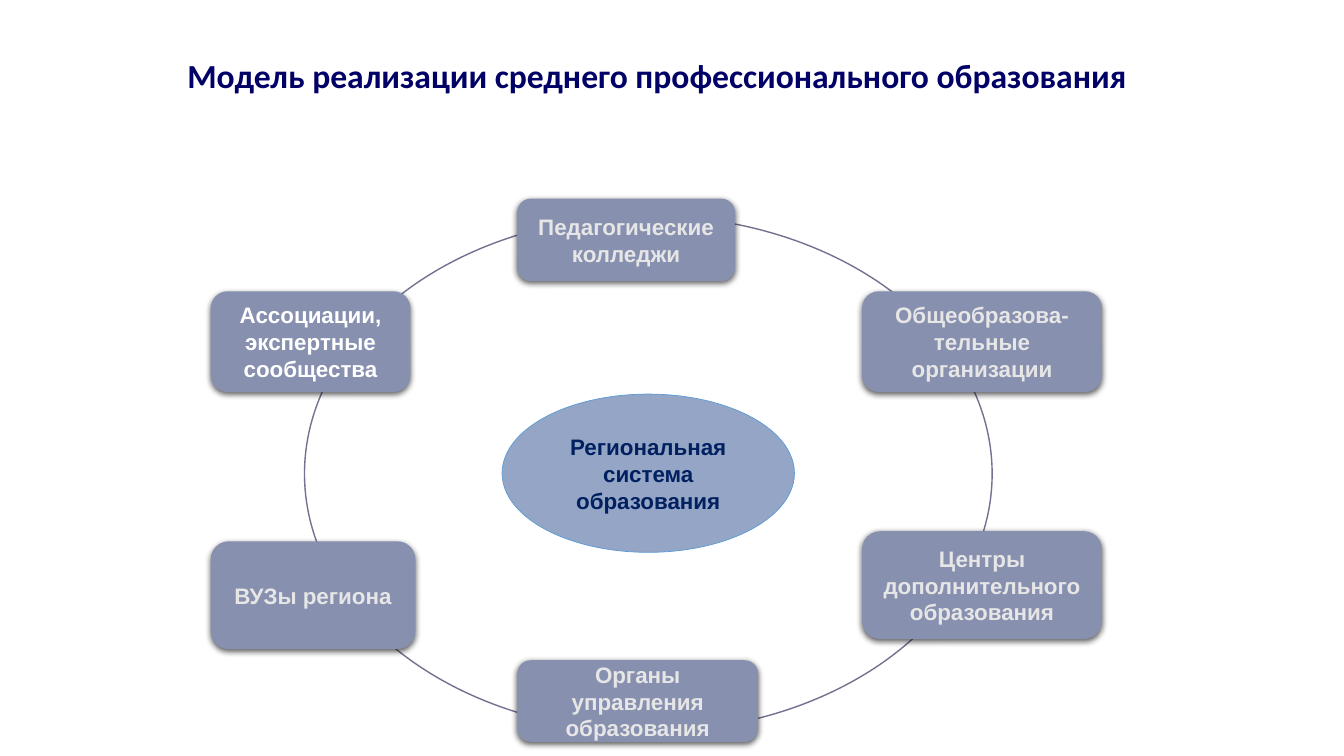
from lxml import etree
from pptx import Presentation
from pptx.dml.color import RGBColor
from pptx.enum.shapes import MSO_SHAPE
from pptx.enum.text import MSO_ANCHOR, PP_ALIGN
from pptx.oxml.ns import qn
from pptx.util import Pt

OVAL, CARD = MSO_SHAPE.OVAL, MSO_SHAPE.ROUNDED_RECTANGLE
TOP, MIDDLE = MSO_ANCHOR.TOP, MSO_ANCHOR.MIDDLE
CENTER = PP_ALIGN.CENTER
PX = 9144  # 100 px to the inch

COLORS = {
    "title": "000066", "white": "FFFFFF", "ring": "737190",
    "core": "95A5C6", "edge": "5B9BD5", "navy": "002060",
    "card": "8790AF", "pale": "E7E6E6", "shade": "000000",
}

TITLE = "Модель реализации среднего профессионального образования "
CORE = "Региональная система образования"
TITLE_BOX = (70, 50, 1171, 101)
RING_BOX = (302, 214, 682, 512)
CORE_BOX = (498, 391, 290, 157)

LEFT, MID, RIGHT = 209, 513, 855
UPPER = 289
CARDS = [
    ("Ассоциации, экспертные сообщества", (LEFT, UPPER, 198, 100), "white"),
    ("ВУЗы региона", (LEFT, 537, 203, 107), "pale"),
    ("Органы управления образования", (MID, 655, 239, 81), "pale"),
    ("Центры дополнительного образования", (RIGHT, 527, 238, 107), "pale"),
    ("Общеобразова-тельные организации", (RIGHT, UPPER, 238, 100), "pale"),
    ("Педагогические колледжи", (MID, 197, 216, 82), "pale"),
]


def rgb(name):
    return RGBColor.from_string(COLORS[name])


def emu(box):
    return [n * PX for n in box]


def write(shape, text, color, size=16, font="Arial", anchor=MIDDLE):
    frame = shape.text_frame
    frame.word_wrap = True
    frame.vertical_anchor = anchor
    para = frame.paragraphs[0]
    para.alignment = CENTER
    run = para.add_run()
    run.text = text
    run.font.size = Pt(size)
    run.font.name = font
    run.font.bold = True
    run.font.color.rgb = rgb(color)


def draw(slide, kind, box, fill, line=None, width=1):
    shape = slide.shapes.add_shape(kind, *emu(box))
    shape.shadow.inherit = False
    shape.fill.solid()
    shape.fill.fore_color.rgb = rgb(fill)
    if line:
        shape.line.color.rgb = rgb(line)
        shape.line.width = Pt(width)
    else:
        shape.line.fill.background()
    return shape


def shade(shape):
    """Add a soft shadow straight below the shape."""
    effects = shape.element.spPr.find(qn("a:effectLst"))
    outer = etree.SubElement(
        effects, qn("a:outerShdw"), blurRad=str(Pt(4.5)), dist=str(Pt(1.5)),
        dir="5400000", algn="ctr", rotWithShape="0")
    color = etree.SubElement(outer, qn("a:srgbClr"), val=COLORS["shade"])
    etree.SubElement(color, qn("a:alpha"), val="63000")


def main():
    deck = Presentation()
    deck.slide_width, deck.slide_height = emu((1333, 750))
    slide = deck.slides.add_slide(deck.slide_layouts[6])

    title = slide.shapes.add_textbox(*emu(TITLE_BOX))
    write(title, TITLE, "title", size=24, font="Calibri", anchor=TOP)

    draw(slide, OVAL, RING_BOX, "white", "ring")
    core = draw(slide, OVAL, CORE_BOX, "core", "edge", 0.5)
    write(core, CORE, "navy")

    for text, box, color in CARDS:
        card = draw(slide, CARD, box, "card")
        shade(card)
        write(card, text, color)

    deck.save("out.pptx")


if __name__ == "__main__":
    main()
